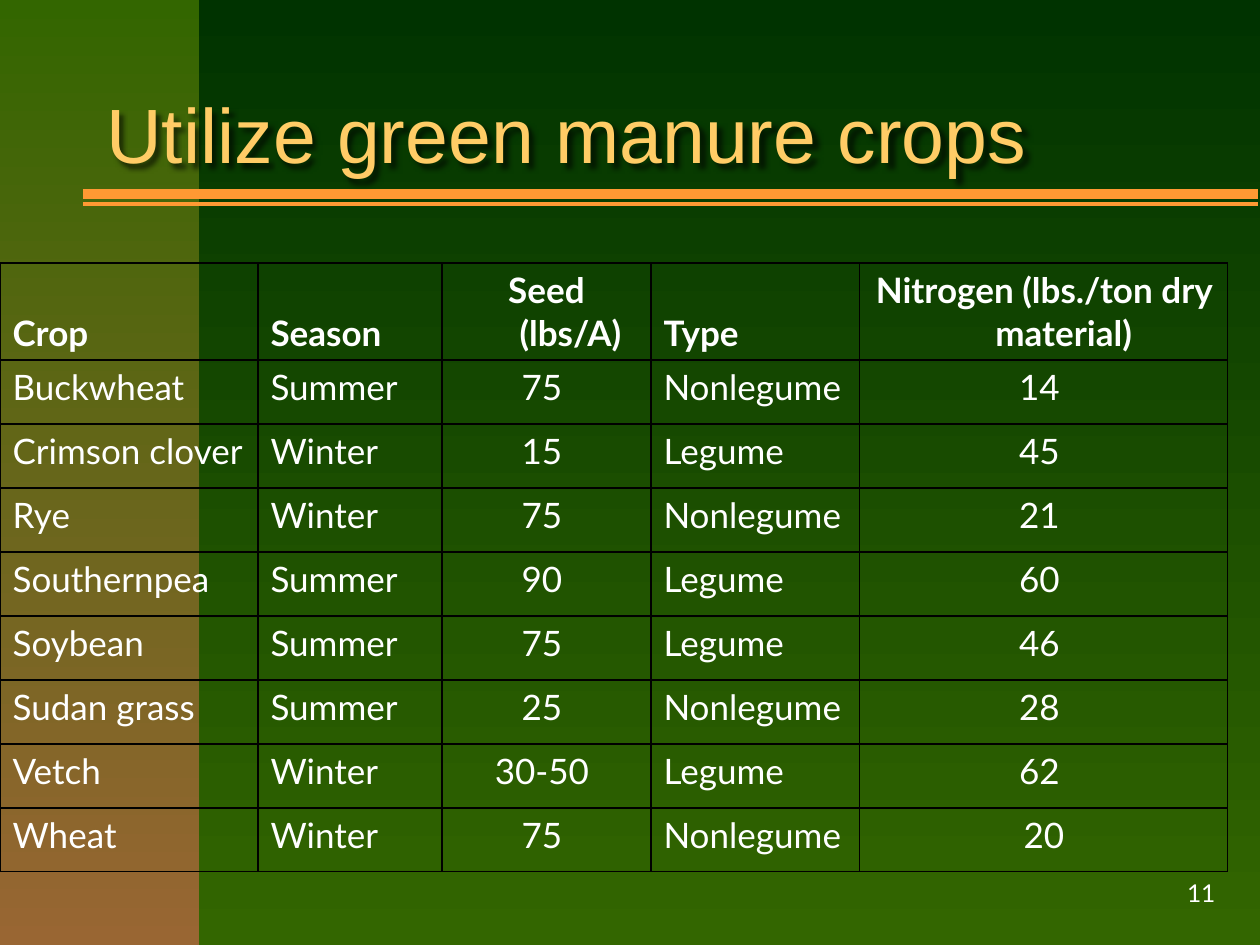
import dataclasses
import typing

import lxml.etree
import pptx
import pptx.dml.color
import pptx.enum.shapes
import pptx.enum.text
import pptx.oxml
import pptx.oxml.ns
import pptx.util

PX = 914400 / 126
ALIGN = pptx.enum.text.PP_ALIGN
ANCHOR = pptx.enum.text.MSO_ANCHOR
NS = 'xmlns:a="http://schemas.openxmlformats.org/drawingml/2006/main"'
WHITE = "FFFFFF"
HEADER_HEIGHT, ROW_HEIGHT = 97, 64
HANGING_INDENT = 48


@dataclasses.dataclass(frozen=True)
class Box:
    left: int
    top: int
    width: int
    height: int

    def emu(self) -> tuple[int, ...]:
        return tuple(px(length) for length in dataclasses.astuple(self))


@dataclasses.dataclass(frozen=True)
class Rule:
    y: int
    weight: int


@dataclasses.dataclass(frozen=True)
class Column:
    heading: str
    width: int
    align: typing.Any = ALIGN.LEFT


class Crop(typing.NamedTuple):
    name: str
    season: str
    seed: str
    kind: str
    nitrogen: str


RULES = [Rule(204, 2), Rule(194, 6)]
COLUMNS = [
    Column("Crop", 258),
    Column("Season", 184),
    Column("Seed (lbs/A)", 209, ALIGN.CENTER),
    Column("Type", 209),
    Column("Nitrogen (lbs./ton dry material) ", 368, ALIGN.CENTER),
]
CROPS = [
    Crop("Buckwheat", "Summer", "75 ", "Nonlegume", "14 "),
    Crop("Crimson clover", "Winter", "15 ", "Legume", "45 "),
    Crop("Rye", "Winter", "75 ", "Nonlegume", "21 "),
    Crop("Southernpea", "Summer", "90 ", "Legume", "60 "),
    Crop("Soybean", "Summer", "75 ", "Legume", "46 "),
    Crop("Sudan grass", "Summer", "25 ", "Nonlegume", "28 "),
    Crop("Vetch", "Winter", "30-50 ", "Legume", "62 "),
    Crop("Wheat", "Winter", "75 ", "Nonlegume", "20"),
]


def px(length: int) -> int:
    return round(length * PX)


def rgb(code: str) -> pptx.dml.color.RGBColor:
    return pptx.dml.color.RGBColor.from_string(code)


def apply(target: typing.Any, values: dict[str, typing.Any]) -> None:
    for name, value in values.items():
        setattr(target, name, value)


def fill_gradient(fill: typing.Any, top: str, bottom: str) -> None:
    fill.gradient()
    fill.gradient_angle = 270
    for stop, code in zip(fill.gradient_stops, (top, bottom)):
        stop.color.rgb = rgb(code)


def write(paragraph: typing.Any, text: str, size: int, face: str,
          color: str = WHITE, bold: bool = False, align: typing.Any = ALIGN.LEFT) -> None:
    paragraph.alignment = align
    run = paragraph.add_run()
    run.text = text
    apply(run.font, {"size": pptx.util.Pt(size), "name": face, "bold": bold})
    run.font.color.rgb = rgb(color)


def add_label(slide: typing.Any, box: Box, text: str, size: int, face: str,
              color: str, align: typing.Any, wrap: bool) -> typing.Any:
    label = slide.shapes.add_textbox(*box.emu())
    apply(label.text_frame, {"word_wrap": wrap, "vertical_anchor": ANCHOR.MIDDLE})
    write(label.text_frame.paragraphs[0], text, size, face, color, align=align)
    return label


def add_title(slide: typing.Any) -> None:
    title = add_label(slide, Box(94, 34, 1124, 198), "Utilize green manure crops",
                      44, "Arial", "FFCC66", ALIGN.LEFT, True)
    title._element.spPr.append(pptx.oxml.parse_xml(
        f'<a:effectLst {NS}><a:outerShdw blurRad="38100" dist="38100" dir="2700000">'
        '<a:srgbClr val="000000"><a:alpha val="60000"/></a:srgbClr>'
        '</a:outerShdw></a:effectLst>'))


def add_side_band(slide: typing.Any) -> None:
    band = slide.shapes.add_shape(
        pptx.enum.shapes.MSO_SHAPE.RECTANGLE, *Box(0, 0, 199, 945).emu())
    band.shadow.inherit = False
    band.line.fill.background()
    fill_gradient(band.fill, "336600", "996633")


def add_rule(slide: typing.Any, rule: Rule) -> None:
    line = slide.shapes.add_connector(
        pptx.enum.shapes.MSO_CONNECTOR.STRAIGHT,
        px(83), px(rule.y), px(1258), px(rule.y))
    line.line.color.rgb = rgb("FF9933")
    line.line.width = pptx.util.Pt(rule.weight)
    lxml.etree.SubElement(line._element.spPr, pptx.oxml.ns.qn("a:effectLst"))


def add_borders(cell: typing.Any) -> None:
    properties = cell._tc.get_or_add_tcPr()
    for position, side in enumerate("LRTB"):
        properties.insert(position, pptx.oxml.parse_xml(
            f'<a:ln{side} {NS} w="9525"><a:solidFill><a:srgbClr val="000000"/>'
            f'</a:solidFill></a:ln{side}>'))


def fill_cell(cell: typing.Any, text: str, column: Column, heading: bool) -> None:
    cell.fill.background()
    cell.vertical_anchor = ANCHOR.BOTTOM if heading else ANCHOR.TOP
    add_borders(cell)
    paragraph = cell.text_frame.paragraphs[0]
    write(paragraph, text, 20, "Lato", bold=heading, align=column.align)
    indent = px(HANGING_INDENT)
    for name, value in {"marL": indent, "indent": -indent}.items():
        paragraph._p.get_or_add_pPr().set(name, str(value))


def add_crop_table(slide: typing.Any) -> None:
    rows = [tuple(column.heading for column in COLUMNS), *CROPS]
    box = Box(0, 263, sum(column.width for column in COLUMNS),
              HEADER_HEIGHT + ROW_HEIGHT * len(CROPS))
    table = slide.shapes.add_table(len(rows), len(COLUMNS), *box.emu()).table
    apply(table, {"first_row": False, "horz_banding": False})
    for table_column, column in zip(table.columns, COLUMNS):
        table_column.width = px(column.width)
    for r, texts in enumerate(rows):
        table.rows[r].height = px(ROW_HEIGHT if r else HEADER_HEIGHT)
        for c, (text, column) in enumerate(zip(texts, COLUMNS)):
            fill_cell(table.cell(r, c), text, column, r == 0)


def main() -> None:
    deck = pptx.Presentation()
    apply(deck, {"slide_width": px(1260), "slide_height": px(945)})
    slide = deck.slides.add_slide(deck.slide_layouts[6])
    fill_gradient(slide.background.fill, "003300", "336600")
    add_side_band(slide)
    for rule in RULES:
        add_rule(slide, rule)
    add_label(slide, Box(966, 861, 262, 63), "11", 14, "Lato", WHITE, ALIGN.RIGHT, False)
    add_title(slide)
    add_crop_table(slide)
    deck.save("out.pptx")


if __name__ == "__main__":
    main()
